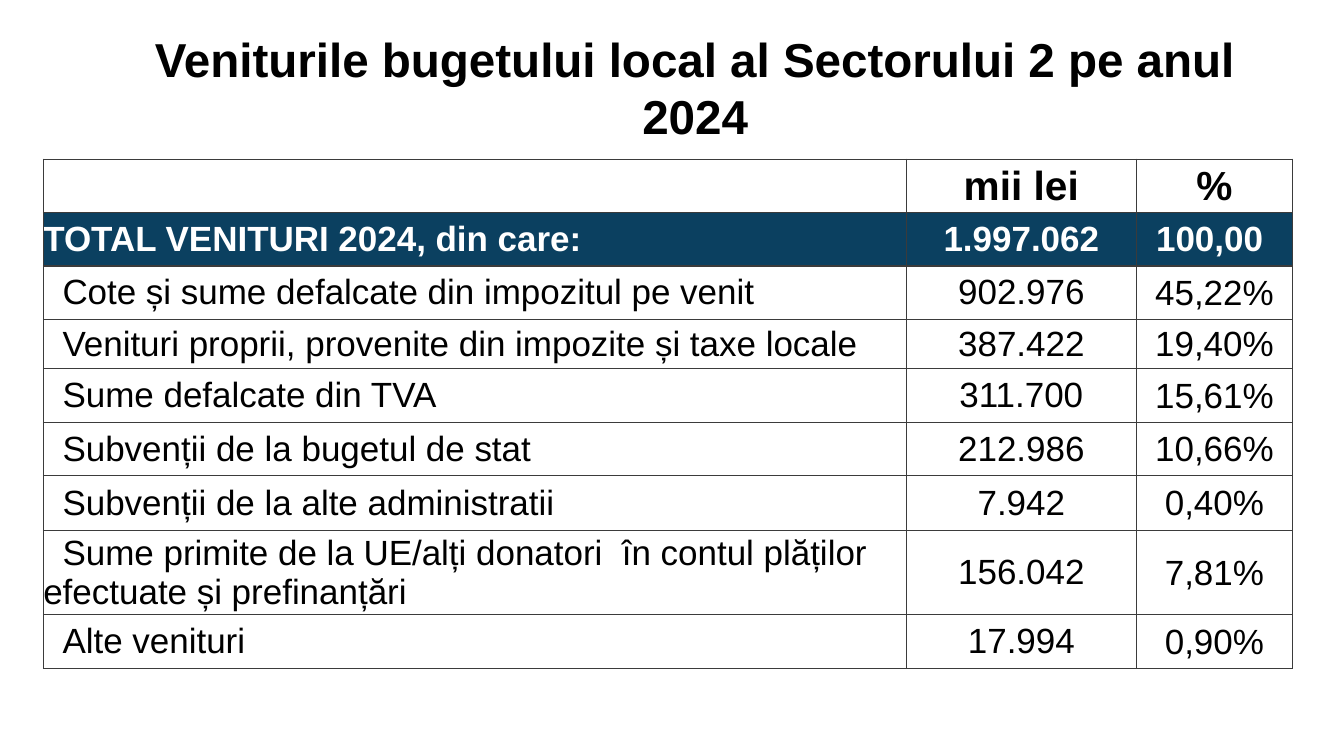
from lxml.etree import SubElement
from pptx import Presentation
from pptx.dml.color import RGBColor
from pptx.enum.text import MSO_ANCHOR as Anchor, PP_ALIGN as Align
from pptx.oxml.ns import qn
from pptx.util import Inches, Pt


def style(paragraph, size, color, bold, align):
    paragraph.alignment = align
    font = paragraph.font
    font.name, font.size, font.bold = "Arial", Pt(size), bold
    font.color.rgb = RGBColor.from_string(color)


def add_borders(cell, color):
    properties = cell._tc.get_or_add_tcPr()
    for position, side in enumerate(("a:lnL", "a:lnR", "a:lnT", "a:lnB")):
        line = SubElement(properties, qn(side), w=str(Pt(1)))
        fill = SubElement(line, qn("a:solidFill"))
        SubElement(fill, qn("a:srgbClr"), val=color)
        properties.remove(line)
        properties.insert(position, line)


prs = Presentation()
prs.slide_width, prs.slide_height = Inches(13.33), Inches(7.5)
slide = prs.slides.add_slide(prs.slide_layouts[6])

# Title
title = slide.shapes.add_textbox(Inches(1.32), Inches(0.32), Inches(11.15), Inches(1.08)).text_frame
title.word_wrap = True
title.vertical_anchor = Anchor.MIDDLE
title.text = "Veniturile bugetului local al Sectorului 2 pe anul 2024"
style(title.paragraphs[0], 34, "000000", True, Align.CENTER)

# Revenue table
revenues = [
    ("", "mii lei", "%"),
    ("TOTAL VENITURI 2024, din care:", "1.997.062", "100,00 "),
    ("Cote și sume defalcate din impozitul pe venit", "902.976", "45,22%"),
    ("Venituri proprii, provenite din impozite și taxe locale", "387.422", "19,40%"),
    ("Sume defalcate din TVA", "311.700", "15,61%"),
    ("Subvenții de la bugetul de stat", "212.986", "10,66%"),
    ("Subvenții de la alte administratii", "7.942", "0,40%"),
    ("Sume primite de la UE/alți donatori  în contul plăților efectuate și prefinanțări",
     "156.042", "7,81%"),
    ("Alte venituri", "17.994", "0,90%"),
]
column_widths = [8.56, 2.28, 1.55]
row_heights = [0.53, 0.53, 0.53, 0.49, 0.53, 0.53, 0.54, 0.84, 0.53]
table = slide.shapes.add_table(len(revenues), 3, Inches(0.43), Inches(1.58),
                               Inches(12.39), Inches(5.06)).table
table.first_row = table.horz_banding = False
for column, width in zip(table.columns, column_widths):
    column.width = Inches(width)
for row, height in zip(table.rows, row_heights):
    row.height = Inches(height)

for r, revenue in enumerate(revenues):
    is_header, is_total = r == 0, r == 1
    for c, text in enumerate(revenue):
        cell = table.cell(r, c)
        cell.text = text
        cell.vertical_anchor = Anchor.MIDDLE
        side = 0.07 if is_header else 0.01 if c == 2 and not is_total else 0
        cell.margin_left = cell.margin_right = Inches(side)
        cell.margin_top = Inches(0.01 if side == 0.01 else 0)
        cell.margin_bottom = 0
        if is_total:
            cell.fill.solid()
            cell.fill.fore_color.rgb = RGBColor.from_string("0B4060")
        else:
            cell.fill.background()
        add_borders(cell, "3B3B3B")

        paragraph = cell.text_frame.paragraphs[0]
        if c == 0 and r > 1:  # first-line indent of the revenue sources
            paragraph._p.get_or_add_pPr().set("indent", str(Inches(0.19)))
        style(paragraph, 29 if is_header else 25, "FFFFFF" if is_total else "000000",
              is_header or is_total, Align.CENTER if c else Align.LEFT)

prs.save("out.pptx")
